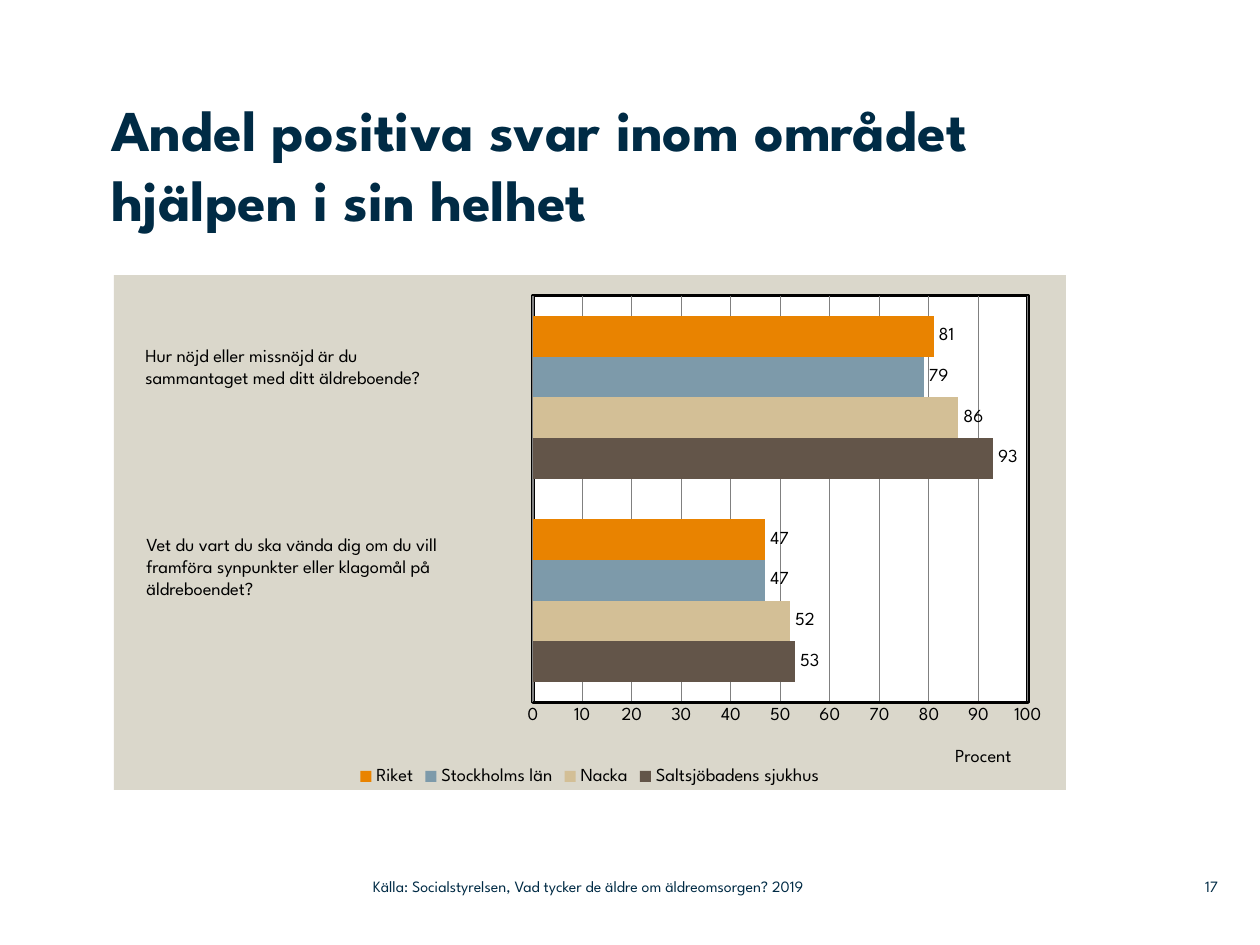
from lxml import etree
from pptx import Presentation
from pptx import util as u
from pptx.chart.data import CategoryChartData
from pptx.dml.color import RGBColor
from pptx.enum import chart as ch, text
from pptx.oxml import parse_xml
from pptx.oxml.ns import nsdecls, qn

FONT, NAVY, BLACK = "League Spartan", "002B45", "000000"
PX = u.Inches(1) / 126


def style(font, size=10.5, color=BLACK, bold=False):
    font.name, font.size, font.bold = FONT, u.Pt(size), bold
    font.color.rgb = RGBColor.from_string(color)


def write(sp, lines, box, size=10.5, color=BLACK, bold=False, inset=None,
          align=text.PP_ALIGN.LEFT, anchor=text.MSO_ANCHOR.TOP):
    sp.left, sp.top, sp.width, sp.height = (round(n * PX) for n in box)
    tf = sp.text_frame
    tf.word_wrap, tf.auto_size = True, text.MSO_AUTO_SIZE.NONE
    tf.vertical_anchor = anchor
    if inset is not None:
        tf.margin_left = tf.margin_top = tf.margin_right = tf.margin_bottom = inset
    for i, line in enumerate(lines):
        p = tf.paragraphs[0] if i == 0 else tf.add_paragraph()
        p.alignment = align
        r = p.add_run()
        r.text = line
        style(r.font, size, color, bold)


prs = Presentation()
prs.slide_width, prs.slide_height = u.Inches(10), u.Inches(7.5)
s = prs.slides.add_slide(prs.slide_layouts[5])

# Chart data, bottom bar first
series = [
    ("Saltsjöbadens sjukhus", (53, 93), "635549"),
    ("Nacka", (52, 86), "D3BF96"),
    ("Stockholms län", (47, 79), "7D9AAA"),
    ("Riket", (47, 81), "E98300"),
]
data = CategoryChartData()
data.categories = ["1", "2"]
for name, values, color in series:
    data.add_series(name, values)
box = [round(n * PX) for n in (114, 275, 952, 515)]
chart = s.shapes.add_chart(ch.XL_CHART_TYPE.BAR_CLUSTERED, *box, data).chart
style(chart.font)
chart.has_title = False

# Bars and value labels
plot = chart.plots[0]
plot.gap_width, plot.overlap, plot.vary_by_categories = 100, 0, False
for ser, (name, values, color) in zip(plot.series, series):
    ser.format.fill.solid()
    ser.format.fill.fore_color.rgb = RGBColor.from_string(color)
    labels = ser.data_labels
    labels.show_value = True
    labels.position = ch.XL_LABEL_POSITION.OUTSIDE_END
    style(labels.font)

# Axes
chart.category_axis.visible = False
axis = chart.value_axis
axis.minimum_scale, axis.maximum_scale, axis.major_unit = 0, 100, 10
axis.major_tick_mark = axis.minor_tick_mark = ch.XL_TICK_MARK.NONE
axis.format.line.color.rgb = RGBColor.from_string(BLACK)
axis.format.line.width = u.Pt(2)
axis.has_major_gridlines = True
grid = axis.major_gridlines.format.line
grid.color.rgb = RGBColor.from_string("808080")
grid.width = u.Pt(0.75)
style(axis.tick_labels.font)
tf = axis.axis_title.text_frame
tf.text = "Procent"
style(tf.paragraphs[0].runs[0].font)

# Legend
chart.has_legend = True
chart.legend.position = ch.XL_LEGEND_POSITION.BOTTOM
chart.legend.include_in_layout = False
style(chart.legend.font)


# Manual places for the plot and the axis title
def layout(parent, before, inner="", **place):
    for old in parent.findall(qn("c:layout")):
        parent.remove(old)
    modes = "".join(f'<c:{k}Mode val="edge"/>' for k in "xy")
    sizes = "".join(f'<c:{k} val="{v}"/>' for k, v in place.items())
    before.addprevious(parse_xml(
        f'<c:layout {nsdecls("c")}><c:manualLayout>{inner}{modes}{sizes}'
        '</c:manualLayout></c:layout>'))


area = plot._element.getparent()
layout(area, plot._element, '<c:layoutTarget val="inner"/>', x=0.44, y=0.04, w=0.52, h=0.79)
title = axis.axis_title._element
layout(title, title.find(qn("c:overlay")), x=0.88, y=0.91)

# Plot and chart backgrounds
def background(fill, line):
    return parse_xml(
        f'<c:spPr {nsdecls("c", "a")}><a:solidFill><a:srgbClr val="{fill}"/></a:solidFill>'
        f'<a:ln w="{u.Pt(2)}">{line}</a:ln></c:spPr>')


area.append(background("FFFFFF", f'<a:solidFill><a:srgbClr val="{BLACK}"/></a:solidFill>'))
chart._chartSpace.find(qn("c:chart")).addnext(background("DAD7CB", "<a:noFill/>"))

# Title
write(s.shapes.title, ["Andel positiva svar inom området hjälpen i sin helhet"],
      (111, 94, 958, 179), size=33, color=NAVY, bold=True, inset=0)

# Questions, footer source and page number
small = dict(size=9, color=NAVY, inset=0, anchor=text.MSO_ANCHOR.MIDDLE)
for lines, place, fmt in [
    (["Hur nöjd eller missnöjd är du", "sammantaget med ditt äldreboende?"],
     (133, 338, 375, 57), {}),
    (["Vet du vart du ska vända dig om du vill framföra synpunkter eller "
      "klagomål på äldreboendet?"], (134, 527, 374, 79), {}),
    (["17"], (1159, 868, 59, 37), dict(small, align=text.PP_ALIGN.RIGHT)),
    (["Källa: Socialstyrelsen, Vad tycker de äldre om äldreomsorgen? 2019"],
     (373, 868, 558, 37), small),
]:
    write(s.shapes.add_textbox(0, 0, 0, 0), lines, place, **fmt)

prs.save("out.pptx")
